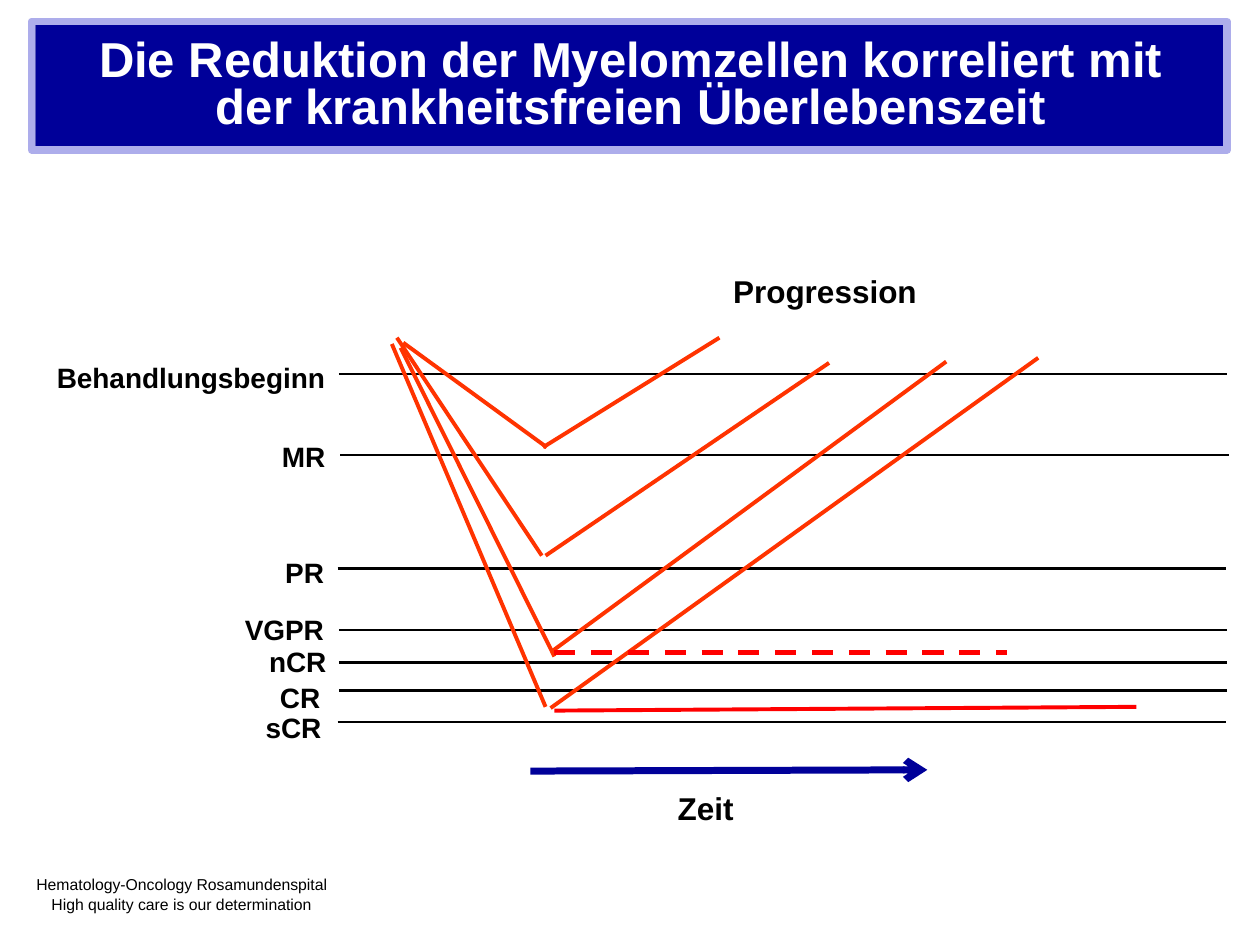
from collections import namedtuple

from lxml import etree
from pptx import Presentation
from pptx.dml.color import RGBColor
from pptx.enum.dml import MSO_LINE
from pptx.enum.shapes import MSO_CONNECTOR, MSO_SHAPE
from pptx.enum.text import MSO_ANCHOR, PP_ALIGN
from pptx.oxml.ns import qn
from pptx.util import Inches, Pt

LEFT, CENTER, RIGHT = PP_ALIGN.LEFT, PP_ALIGN.CENTER, PP_ALIGN.RIGHT
TOP, MIDDLE = MSO_ANCHOR.TOP, MSO_ANCHOR.MIDDLE
STRAIGHT, RECTANGLE, DASH = MSO_CONNECTOR.STRAIGHT, MSO_SHAPE.RECTANGLE, MSO_LINE.DASH

FONT = "Arial"
COLORS = {"navy": "000099", "lavender": "ADADEB", "white": "FFFFFF",
          "black": "000000", "course": "FF3300", "remission": "FF0000"}

# The slide is a grid of 100 columns by 75 rows; boxes are in grid units.
COLUMNS, ROWS = 100, 75
CELL = Inches(0.1)
Box = namedtuple("Box", "left top width height")

TITLE = Box(2.8, 2, 94.5, 9.8)
PLOT = Box(26.9, 29.7, 70.5, 27.6)
TIME = Box(42.1, 61.2, 31.5, 5)
FOOTER = Box(0, 68.2, 29.9, 5.2)

# response, line row, line shift, label (right edge, centre row, width)
LEVELS = [
    ("Behandlungsbeginn", 0, 0, (-0.1, 0.25, 23.3)),
    ("MR", 6.4, 0.1, (-0.1, 6.55, 5.5)),
    ("PR", 15.4, -0.1, (-0.2, 15.75, 5.1)),
    ("VGPR", 20.3, 0, (-0.2, 20.25, 8.3)),
    ("nCR", 22.9, 0, (0, 22.85, 6.6)),
    ("CR", 25.1, 0, (-0.5, 25.7, 5.2)),
    ("sCR", 27.6, -0.1, (-0.4, 28.05, 6.4)),
]
# each course: fall (start, end), then rise (start, end)
COURSES = [
    ((4.2, -2.4), (16.4, 26.4), (16.8, 26.5), (55.5, -1.3)),
    ((4.9, -2.1), (17.1, 22.4), (16.9, 22), (48.2, -1)),
    ((4.6, -2.9), (16.1, 14.4), (16.4, 14.4), (38.9, -0.9)),
    ((5.1, -2.5), (16.5, 5.8), (16.2, 5.8), (30.2, -2.9)),
]


def units(count):
    return round(count * CELL)


def place(box):
    return [units(length) for length in box]


def color(name):
    return RGBColor.from_string(COLORS[name])


def write(frame, text, size=16, ink="black", bold=True, align=LEFT,
          anchor=TOP, wrap=False, spacing=None, indents=()):
    """Fill a text frame, one paragraph per line, with indents in grid units."""
    frame.word_wrap = wrap
    frame.vertical_anchor = anchor
    frame.text = text
    for paragraph in frame.paragraphs:
        paragraph.alignment = align
        paragraph.line_spacing = spacing
        font = paragraph.font
        font.name, font.size, font.bold = FONT, Pt(size), bold
        font.color.rgb = color(ink)
    for paragraph, indent in zip(frame.paragraphs, indents):
        paragraph._p.get_or_add_pPr().set("marL", str(units(indent)))


def add_label(slide, box, text, **style):
    label = slide.shapes.add_textbox(*place(box))
    write(label.text_frame, text, **style)
    return label


def add_line(slide, box, start, end, ink="black", width=1.5, dash=None, arrow=False):
    """Draw a line between two points given relative to the box."""
    ends = [units(origin + shift) for point in (start, end)
            for origin, shift in zip((box.left, box.top), point)]
    line = slide.shapes.add_connector(STRAIGHT, *ends)
    line.line.color.rgb = color(ink)
    line.line.width = Pt(width)
    if dash:
        line.line.dash_style = dash
    if arrow:
        etree.SubElement(line.line._get_or_add_ln(), qn("a:tailEnd"), type="arrow")
    etree.SubElement(line._element.spPr, qn("a:effectLst"))


def add_title(slide, box, text):
    banner = slide.shapes.add_shape(RECTANGLE, *place(box))
    banner.fill.solid()
    banner.fill.fore_color.rgb = color("navy")
    banner.line.fill.background()
    write(banner.text_frame, text, size=28, ink="white", align=CENTER,
          anchor=MIDDLE, wrap=True, spacing=0.8)
    banner.text_frame.margin_left = banner.text_frame.margin_right = units(3)
    border = Box(box.left - 0.3, box.top - 0.3, box.width + 0.4, box.height + 0.4)
    frame = slide.shapes.add_shape(RECTANGLE, *place(border))
    frame.fill.background()
    frame.line.color.rgb = color("lavender")
    frame.line.width = Pt(4.25)
    etree.SubElement(frame.line._get_or_add_ln(), qn("a:round"))
    for shape in (banner, frame):
        shape.shadow.inherit = False


def add_response_plot(slide, box):
    label_height = 3.7
    for response, row, shift, (edge, center, width) in LEVELS:
        add_line(slide, box, (shift, row), (box.width + shift, row))
        label_box = Box(box.left + edge - width, box.top + center - label_height / 2,
                        width, label_height)
        add_label(slide, label_box, response, align=RIGHT)
    for fall_start, fall_end, rise_start, rise_end in COURSES:
        add_line(slide, box, fall_start, fall_end, ink="course", width=2.25)
        add_line(slide, box, rise_start, rise_end, ink="course", width=2.25)
    add_line(slide, box, (17.1, 26.7), (63.3, 26.4), ink="remission", width=2.25)
    add_line(slide, box, (17.1, 22.1), (53, 22.1), ink="remission", width=3, dash=DASH)
    add_label(slide, Box(box.left + 30.3, box.top - 8.6, 16.6, 4), "Progression", size=18)


def add_time_axis(slide, box):
    add_line(slide, box, (0, 0), (box.width, -0.1), ink="navy", width=4, arrow=True)
    add_label(slide, Box(box.left + 10.7, box.top + 0.9, 6.5, 4), "Zeit", size=18)


def add_footer(slide, box):
    footer = add_label(
        slide, box,
        "Hematology-Oncology Rosamundenspital\nHigh quality care is our determination",
        size=9, bold=False, wrap=True, indents=(1.9, 3.1))
    footer.text_frame.margin_top = units(1.2)
    footer.text_frame.paragraphs[1].space_before = Pt(1)


def main():
    presentation = Presentation()
    presentation.slide_width, presentation.slide_height = units(COLUMNS), units(ROWS)
    slide = presentation.slides.add_slide(presentation.slide_layouts[6])
    add_footer(slide, FOOTER)
    add_title(slide, TITLE, "Die Reduktion der Myelomzellen korreliert mit "
                            "der krankheitsfreien Überlebenszeit")
    add_response_plot(slide, PLOT)
    add_time_axis(slide, TIME)
    presentation.save("out.pptx")


if __name__ == "__main__":
    main()
